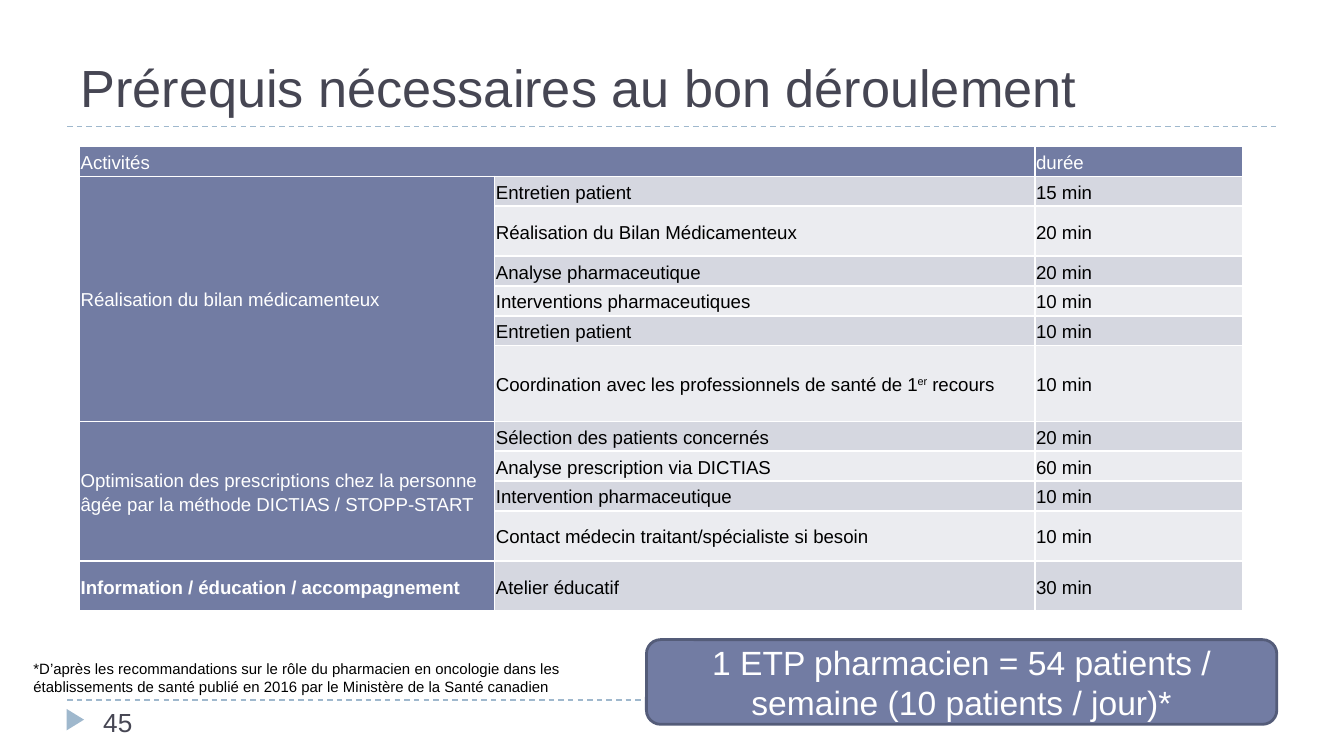
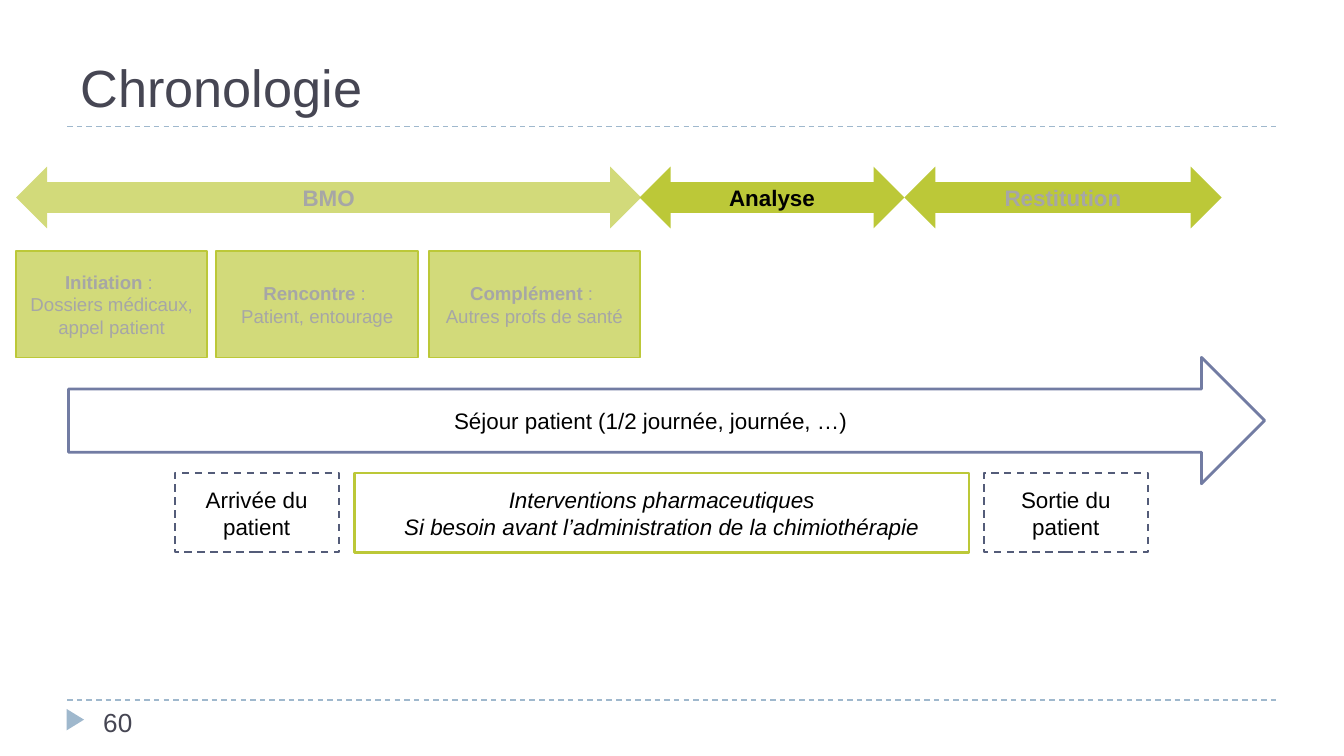
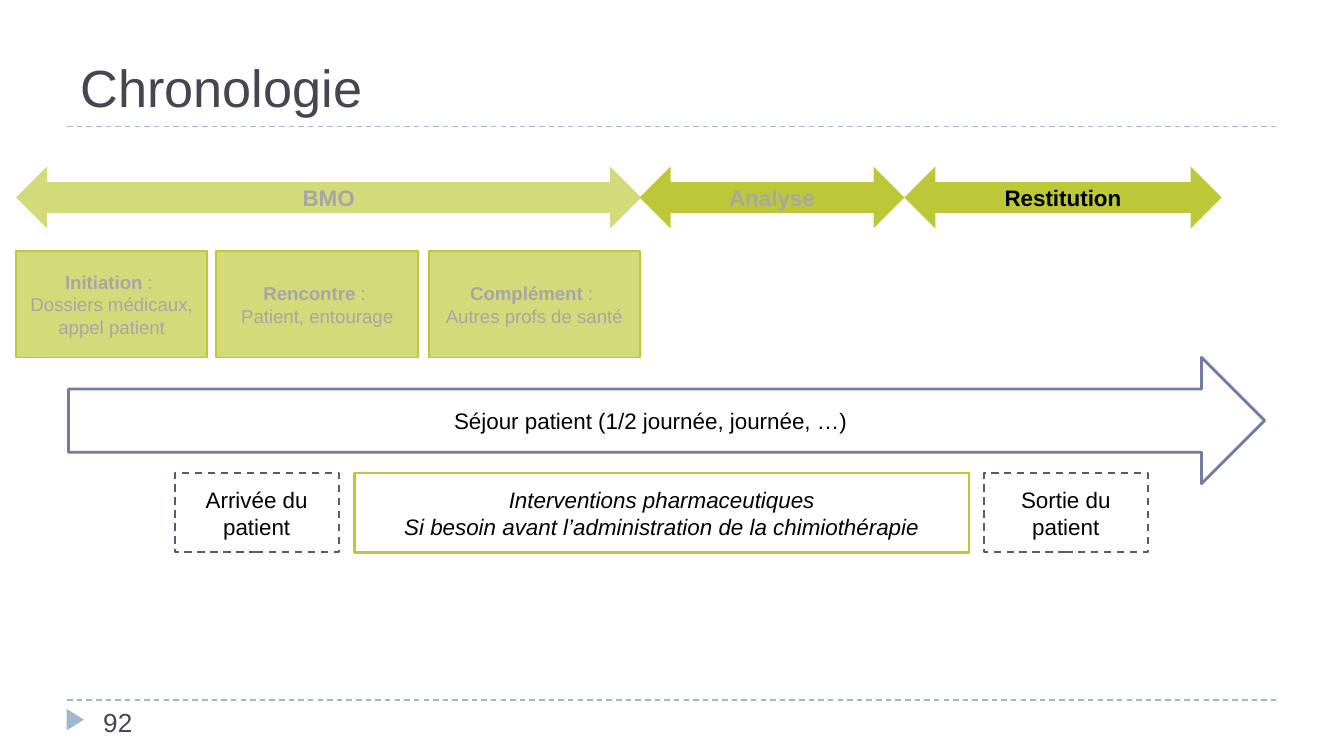
import pptx
import pptx.util
import pptx.oxml
import pptx.oxml.ns
from pptx.dml.color import RGBColor
from pptx.enum.dml import MSO_LINE
from pptx.enum.shapes import MSO_CONNECTOR, MSO_SHAPE
from pptx.enum.text import MSO_ANCHOR, MSO_AUTO_SIZE, PP_ALIGN
from pptx.util import Inches, Pt

FONT = "Arial"
INK = RGBColor(0x46, 0x46, 0x53)
SKY = RGBColor(0x9F, 0xB8, 0xCD)
SLATE = RGBColor(0x72, 0x7C, 0xA3)
DARK_SLATE = RGBColor(0x54, 0x5C, 0x79)
GREEN = RGBColor(0xBC, 0xC8, 0x38)
PALE_GREEN = RGBColor(0xD2, 0xDA, 0x7A)
GREY = RGBColor(0xA6, 0xA6, 0xA6)
BANDS = [RGBColor(0xD5, 0xD7, 0xE0), RGBColor(0xEB, 0xEC, 0xF0)]
WHITE = RGBColor(0xFF, 0xFF, 0xFF)
BLACK = RGBColor(0, 0, 0)


def style(p, size, color, bold=None, italic=None):
    f = p.font
    f.name, f.size, f.bold, f.italic = FONT, Pt(size), bold, italic
    f.color.rgb = color


def add_box(s, kind, box, paragraphs, size, color, fill=None, line=None,
            width=1, dash=False, bold=None, italic=None):
    """Add a shape with centred text; a (heading, rest) pair gets a bold heading."""
    sp = s.shapes.add_shape(kind, *map(Inches, box))
    sp.shadow.inherit = False
    if fill is None:
        sp.fill.background()
    else:
        sp.fill.solid()
        sp.fill.fore_color.rgb = fill
    if line is None:
        sp.line.fill.background()
    else:
        sp.line.color.rgb = line
        sp.line.width = Pt(width)
        if dash:
            sp.line.dash_style = MSO_LINE.DASH
    tf = sp.text_frame
    tf.word_wrap = True
    tf.vertical_anchor = MSO_ANCHOR.MIDDLE
    for i, text in enumerate(paragraphs):
        p = tf.add_paragraph() if i else tf.paragraphs[0]
        if isinstance(text, tuple):
            for j, part in enumerate(text):
                r = p.add_run()
                r.text = part
                r.font.bold = j == 0
        else:
            p.add_run().text = text
        p.alignment = PP_ALIGN.CENTER
        style(p, size, color, bold, italic)
    return sp


# 16:9 page
prs = pptx.Presentation()
prs.slide_width = Inches(10)
prs.slide_height = prs.slide_width * 9 // 16

# Shared frame: rules, marker, title and page number
slides = []
for title, number in [("Prérequis nécessaires au bon déroulement", "45"),
                      ("Chronologie", "60"), ("Chronologie", "92")]:
    s = prs.slides.add_slide(prs.slide_layouts[5])
    slides.append(s)
    for y in (5.21, 0.94):
        rule = s.shapes.add_connector(MSO_CONNECTOR.STRAIGHT, Inches(0.5), Inches(y),
                                      Inches(9.5), Inches(y))
        rule.line.color.rgb = SKY
        rule.line.width = Pt(0.75)
        rule.line.dash_style = MSO_LINE.DASH
        rule._element.spPr.append(pptx.oxml.parse_xml(
            f'<a:effectLst {pptx.oxml.ns.nsdecls("a")}/>'))
    marker = add_box(s, MSO_SHAPE.ISOSCELES_TRIANGLE, (0.48, 5.29, 0.16, 0.13),
                     [], 10, INK, SKY)
    marker.rotation = 90

    sp = s.shapes.title
    sp.left, sp.top, sp.width, sp.height = map(Inches, (0.5, 0.12, 9, 0.81))
    tf = sp.text_frame
    tf.text = title
    tf.auto_size = MSO_AUTO_SIZE.NONE
    tf.vertical_anchor = MSO_ANCHOR.BOTTOM
    p = tf.paragraphs[0]
    p.alignment = PP_ALIGN.LEFT
    style(p, 28, INK)

    sp = s.shapes.add_textbox(*map(Inches, (0.67, 5.21, 2.17, 0.3)))
    sp.text_frame.word_wrap = True
    sp.text_frame.text = number
    style(sp.text_frame.paragraphs[0], 14, INK)

# Slide 1: table of activities
s = slides[0]
rows = [
    ("Activités", "", "durée", 0.22),
    ("Réalisation du bilan médicamenteux", "Entretien patient", "15 min", 0.22),
    ("", "Réalisation du Bilan Médicamenteux", "20 min", 0.37),
    ("", "Analyse pharmaceutique", "20 min", 0.22),
    ("", "Interventions pharmaceutiques", "10 min", 0.22),
    ("", "Entretien patient", "10 min", 0.22),
    ("", "Coordination avec les professionnels de santé de 1^er^ recours", "10 min", 0.56),
    ("Optimisation des prescriptions chez la personne âgée par la méthode "
     "DICTIAS / STOPP-START", "Sélection des patients concernés", "20 min", 0.22),
    ("", "Analyse prescription via DICTIAS", "60 min", 0.22),
    ("", "Intervention pharmaceutique", "10 min", 0.22),
    ("", "Contact médecin traitant/spécialiste si besoin", "10 min", 0.37),
    ("Information / éducation / accompagnement", "Atelier éducatif", "30 min", 0.37),
]
TABLE_HEIGHT = 3.46
stretch = TABLE_HEIGHT / sum(row[-1] for row in rows)
table = s.shapes.add_table(len(rows), 3,
                           *map(Inches, (0.59, 1.09, 8.66, TABLE_HEIGHT))).table
for column, width in zip(table.columns, (3.09, 4.02, 1.55)):
    column.width = Inches(width)
for i, (*texts, height) in enumerate(rows):
    table.rows[i].height = Inches(height * stretch)
    for j, text in enumerate(texts):
        cell = table.cell(i, j)
        cell.margin_left = cell.margin_right = Inches(0.01)
        cell.margin_top = cell.margin_bottom = 0
        cell.vertical_anchor = MSO_ANCHOR.MIDDLE
        for side in "LRTB":
            cell._tc.get_or_add_tcPr().append(pptx.oxml.parse_xml(
                f'<a:ln{side} {pptx.oxml.ns.nsdecls("a")} w="{Pt(1)}"><a:solidFill>'
                f'<a:srgbClr val="{WHITE}"/></a:solidFill></a:ln{side}>'))
        heading = i == 0 or j == 0
        cell.fill.solid()
        cell.fill.fore_color.rgb = SLATE if heading else BANDS[(i - 1) % 2]
        p = cell.text_frame.paragraphs[0]
        p.line_spacing = 1.15
        # Text between carets is superscript
        for k, part in enumerate(text.split("^") if text else []):
            r = p.add_run()
            r.text = part
            if k == 1:
                r._r.get_or_add_rPr().set("baseline", "30000")
        last_heading = j == 0 and i == len(rows) - 1
        style(p, 10, WHITE if heading else BLACK, bold=last_heading)
for first, last in [((0, 0), (0, 1)), ((1, 0), (6, 0)), ((7, 0), (10, 0))]:
    table.cell(*first).merge(table.cell(*last))

# Slide 1: source note and conclusion
sp = s.shapes.add_textbox(*map(Inches, (0.15, 4.86, 4.85, 0.37)))
tf = sp.text_frame
tf.word_wrap = True
tf.text = ("*D’après les recommandations sur le rôle du pharmacien en oncologie dans les "
           "établissements de santé publié en 2016 par le Ministère de la Santé canadien")
style(tf.paragraphs[0], 8, BLACK)
add_box(s, MSO_SHAPE.ROUNDED_RECTANGLE, (4.81, 4.76, 4.69, 0.63),
        ["1 ETP pharmacien = 54 patients / semaine (10 patients / jour)*"],
        18, WHITE, SLATE, DARK_SLATE, 1.5)

# Slides 2 and 3: timeline with the current phase in black
phases = [("BMO", 0.12, 4.65, PALE_GREEN), ("Analyse", 4.76, 1.97, GREEN),
          ("Restitution", 6.73, 2.36, GREEN)]
steps = [("Initiation", "Dossiers médicaux, appel patient", 0.12, 1.42),
         ("Rencontre", "Patient, entourage", 1.61, 1.5),
         ("Complément", "Autres profs de santé", 3.19, 1.57)]
for s, current in zip(slides[1:], ("Analyse", "Restitution")):
    add_box(s, MSO_SHAPE.RIGHT_ARROW, (0.51, 2.66, 8.9, 0.94),
            ["Séjour patient (1/2 journée, journée, …)"], 12, BLACK, WHITE, SLATE, 1.5)
    for x, text in [(1.3, "Arrivée du patient"), (7.32, "Sortie du patient")]:
        add_box(s, MSO_SHAPE.RECTANGLE, (x, 3.52, 1.22, 0.59), [text], 12, BLACK,
                line=DARK_SLATE, dash=True)
    for name, x, width, fill in phases:
        add_box(s, MSO_SHAPE.LEFT_RIGHT_ARROW, (x, 1.24, width, 0.46), [name], 12,
                BLACK if name == current else GREY, fill, bold=True)
    for name, detail, x, width in steps:
        add_box(s, MSO_SHAPE.RECTANGLE, (x, 1.87, width, 0.79), [(name, " : "), detail],
                10, GREY, PALE_GREEN, GREEN)
    add_box(s, MSO_SHAPE.RECTANGLE, (2.64, 3.52, 4.57, 0.59),
            ["Interventions pharmaceutiques",
             "Si besoin avant l’administration de la chimiothérapie"],
            12, BLACK, line=GREEN, width=1.5, italic=True)

prs.save("out.pptx")
